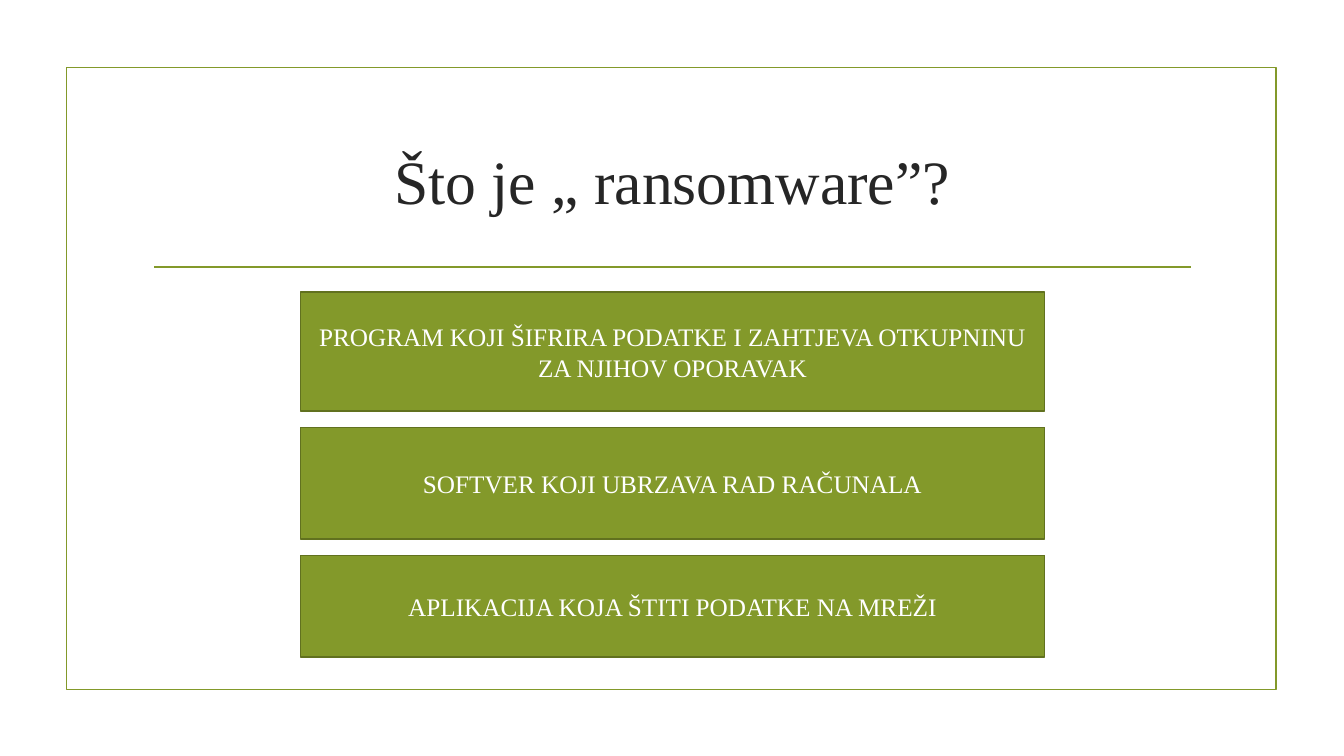
from dataclasses import dataclass

from lxml import etree
from pptx import Presentation
from pptx.dml.color import RGBColor
from pptx.enum.shapes import MSO_CONNECTOR, MSO_SHAPE
from pptx.enum.text import MSO_ANCHOR, PP_ALIGN
from pptx.oxml.ns import qn
from pptx.util import Inches, Pt

RECTANGLE = MSO_SHAPE.RECTANGLE
PROCESS = MSO_SHAPE.FLOWCHART_PROCESS
STRAIGHT = MSO_CONNECTOR.STRAIGHT
MIDDLE = MSO_ANCHOR.MIDDLE
CENTER = PP_ALIGN.CENTER


@dataclass(frozen=True)
class Theme:
    green = RGBColor.from_string("83992A")
    dark_green = RGBColor.from_string("61711F")
    ink = RGBColor.from_string("262626")
    white = RGBColor.from_string("FFFFFF")
    font = "Times New Roman"
    title_size = Pt(44)
    answer_size = Pt(18)
    line_width = Pt(1.25)


def write_centred(shape, text, size, color):
    frame = shape.text_frame
    frame.word_wrap = True
    frame.vertical_anchor = MIDDLE
    para = frame.paragraphs[0]
    para.alignment = CENTER
    span = para.add_run()
    span.text = text
    span.font.name = Theme.font
    span.font.size = size
    span.font.color.rgb = color


def add_outlined(kind, left, top, width, height, line_color):
    shape = page.shapes.add_shape(
        kind, Inches(left), Inches(top), Inches(width), Inches(height))
    shape.shadow.inherit = False
    shape.line.color.rgb = line_color
    shape.line.width = Theme.line_width
    return shape


# Slide
deck = Presentation()
deck.slide_width, deck.slide_height = Inches(13.33), Inches(7.5)
page = deck.slides.add_slide(deck.slide_layouts[6])

# Frame around the page
border = add_outlined(RECTANGLE, 0.66, 0.67, 12, 6.17, Theme.green)
border.fill.background()

# Rule under the title
rule = page.shapes.add_connector(
    STRAIGHT, Inches(1.53), Inches(2.65), Inches(11.81), Inches(2.65))
rule.line.color.rgb = Theme.green
rule.line.width = Theme.line_width
etree.SubElement(rule._element.spPr, qn("a:effectLst"))

# Title
title = page.shapes.add_textbox(
    Inches(1.42), Inches(1.07), Inches(10.5), Inches(1.43))
write_centred(title, "Što je „ ransomware”?", Theme.title_size, Theme.ink)

# Answers, stacked with an equal gap
ANSWER_LEFT, ANSWER_WIDTH, ANSWER_GAP = 2.98, 7.38, 0.16
answers = [
    (RECTANGLE, 1.18,
     "PROGRAM KOJI ŠIFRIRA PODATKE I ZAHTJEVA OTKUPNINU ZA NJIHOV OPORAVAK"),
    (PROCESS, 1.11, "SOFTVER KOJI UBRZAVA RAD RAČUNALA"),
    (PROCESS, 1.01, "APLIKACIJA KOJA ŠTITI PODATKE NA MREŽI"),
]
top = 2.9
for kind, height, text in answers:
    box = add_outlined(
        kind, ANSWER_LEFT, top, ANSWER_WIDTH, height, Theme.dark_green)
    box.fill.solid()
    box.fill.fore_color.rgb = Theme.green
    write_centred(box, text, Theme.answer_size, Theme.white)
    top += height + ANSWER_GAP

deck.save("out.pptx")
